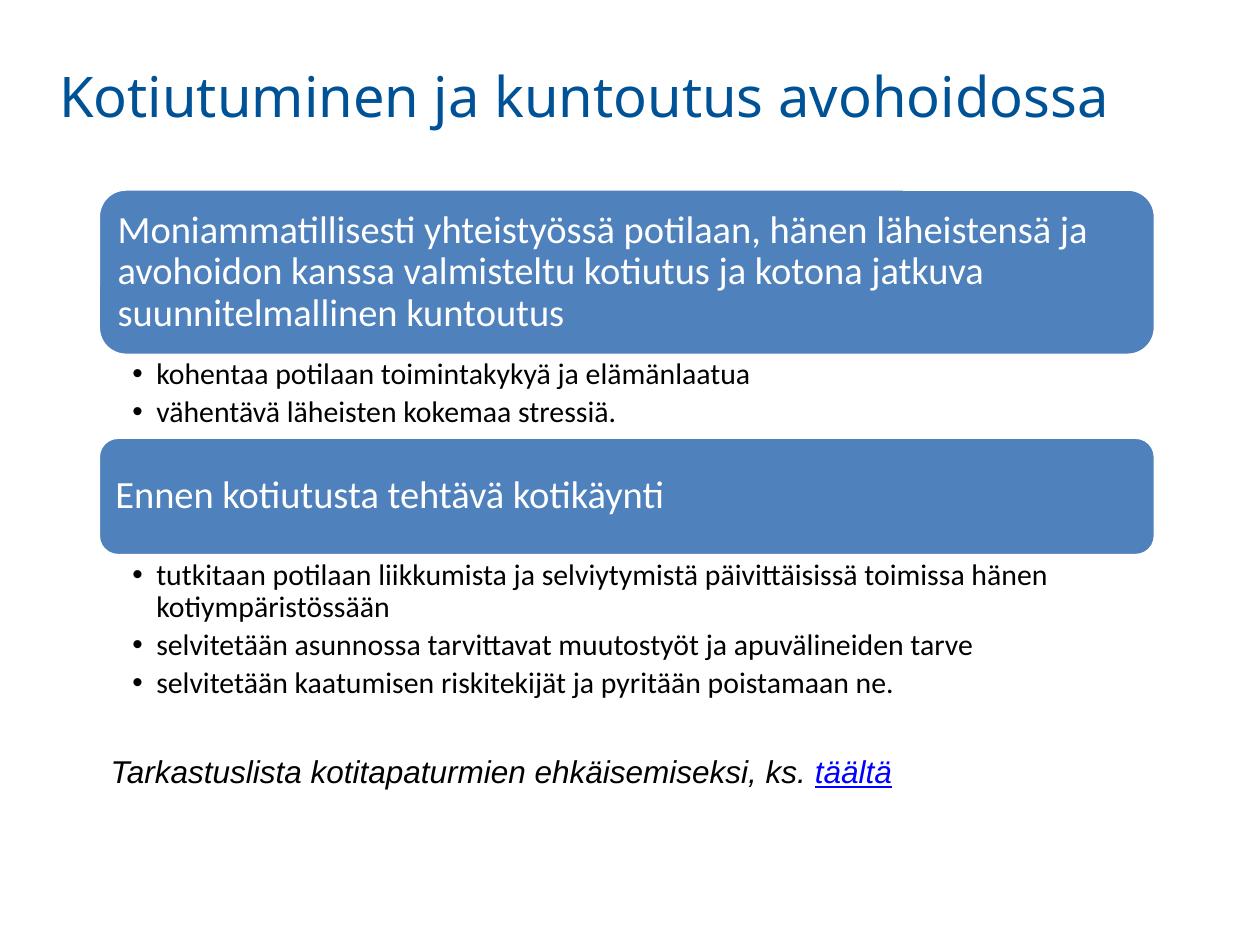
from dataclasses import dataclass

from lxml.etree import SubElement
from pptx import Presentation
from pptx.dml.color import RGBColor
from pptx.enum.shapes import MSO_SHAPE
from pptx.enum.text import MSO_ANCHOR, PP_ALIGN
from pptx.oxml.ns import qn
from pptx.util import Inches, Pt

TITLE = "Kotiutuminen ja kuntoutus avohoidossa"
# heading, heading height, bullets, bullet area height
SECTIONS = [
    ("Moniammatillisesti yhteistyössä potilaan, hänen läheistensä ja avohoidon kanssa "
     "valmisteltu kotiutus ja kotona jatkuva suunnitelmallinen kuntoutus", 1.32,
     ["kohentaa potilaan toimintakykyä ja elämänlaatua",
      "vähentävä läheisten kokemaa stressiä."], 0.65),
    ("Ennen kotiutusta tehtävä kotikäynti", 0.94,
     ["tutkitaan potilaan liikkumista ja selviytymistä päivittäisissä toimissa hänen "
      "kotiympäristössään",
      "selvitetään asunnossa tarvittavat muutostyöt ja apuvälineiden tarve",
      "selvitetään kaatumisen riskitekijät ja pyritään poistamaan ne."], 1.22),
]
NOTE = "Tarkastuslista kotitapaturmien ehkäisemiseksi, ks. "
NOTE_LINK = "täältä"


@dataclass(frozen=True)
class Theme:
    title_color: RGBColor = RGBColor.from_string("005296")
    panel: RGBColor = RGBColor.from_string("4F81BD")
    white: RGBColor = RGBColor.from_string("FFFFFF")
    black: RGBColor = RGBColor.from_string("000000")
    link: RGBColor = RGBColor.from_string("0000FF")
    title_font: str = "Noto Sans"
    body_font: str = "Calibri"
    note_font: str = "Arial"
    title_size: int = 32
    heading_size: int = 22
    bullet_size: int = 17
    note_size: int = 18


THEME = Theme()
LEFT, WIDTH, TOP = 0.78, 8.39, 1.5
BULLET_INDENT = Inches(0.19)
# left, top, right, bottom
DEFAULT_MARGINS = (0.1, 0.05, 0.1, 0.05)
HEADING_MARGINS = (0.09, 0.09, 0.09, 0.09)
BULLET_MARGINS = (0.27, 0.03, 0.17, 0.03)


def add_run(paragraph, text, font, size, color, italic=False, underline=False):
    run = paragraph.add_run()
    run.text = text
    run.font.name = font
    run.font.size = Pt(size)
    run.font.color.rgb = color
    if italic:
        run.font.italic = True
    if underline:
        run.font.underline = True


def set_frame(shape, margins, anchor=MSO_ANCHOR.TOP):
    frame = shape.text_frame
    frame.word_wrap = True
    frame.vertical_anchor = anchor
    (frame.margin_left, frame.margin_top,
     frame.margin_right, frame.margin_bottom) = map(Inches, margins)
    return frame


def add_text_box(slide, left, top, width, height, margins=DEFAULT_MARGINS):
    box = slide.shapes.add_textbox(Inches(left), Inches(top), Inches(width), Inches(height))
    return set_frame(box, margins)


def add_heading(slide, text, top, height):
    panel = slide.shapes.add_shape(MSO_SHAPE.ROUNDED_RECTANGLE, Inches(LEFT), Inches(top),
                                   Inches(WIDTH), Inches(height))
    panel.shadow.inherit = False
    panel.fill.solid()
    panel.fill.fore_color.rgb = THEME.panel
    panel.line.color.rgb = THEME.white
    panel.line.width = Pt(2)
    paragraph = set_frame(panel, HEADING_MARGINS, MSO_ANCHOR.MIDDLE).paragraphs[0]
    paragraph.alignment = PP_ALIGN.LEFT
    paragraph.line_spacing = 0.9
    add_run(paragraph, text, THEME.body_font, THEME.heading_size, THEME.white)


def add_bullets(slide, items, top, height):
    frame = add_text_box(slide, LEFT, top, WIDTH, height, BULLET_MARGINS)
    for index, item in enumerate(items):
        paragraph = frame.add_paragraph() if index else frame.paragraphs[0]
        paragraph.level = 1
        paragraph.line_spacing = 0.9
        paragraph.space_after = Pt(0.2 * THEME.bullet_size)
        properties = paragraph._p.get_or_add_pPr()
        properties.set("marL", str(BULLET_INDENT))
        properties.set("indent", str(-BULLET_INDENT))
        SubElement(properties, qn("a:buFont"), typeface="Arial")
        SubElement(properties, qn("a:buChar"), char="•")
        add_run(paragraph, item, THEME.body_font, THEME.bullet_size, THEME.black)


def main():
    presentation = Presentation()
    presentation.slide_width, presentation.slide_height = Inches(10), Inches(7.5)
    slide = presentation.slides.add_slide(presentation.slide_layouts[6])

    title = add_text_box(slide, 0.37, 0.44, 9.02, 0.78)
    add_run(title.paragraphs[0], TITLE, THEME.title_font, THEME.title_size, THEME.title_color)

    top = TOP
    for heading, heading_height, bullets, bullets_height in SECTIONS:
        add_heading(slide, heading, top, heading_height)
        top += heading_height
        add_bullets(slide, bullets, top, bullets_height)
        top += bullets_height

    note = add_text_box(slide, LEFT, 5.92, 6.47, 0.71).paragraphs[0]
    add_run(note, NOTE, THEME.note_font, THEME.note_size, THEME.black, italic=True)
    add_run(note, NOTE_LINK, THEME.note_font, THEME.note_size, THEME.link,
            italic=True, underline=True)

    presentation.save("out.pptx")


if __name__ == "__main__":
    main()
